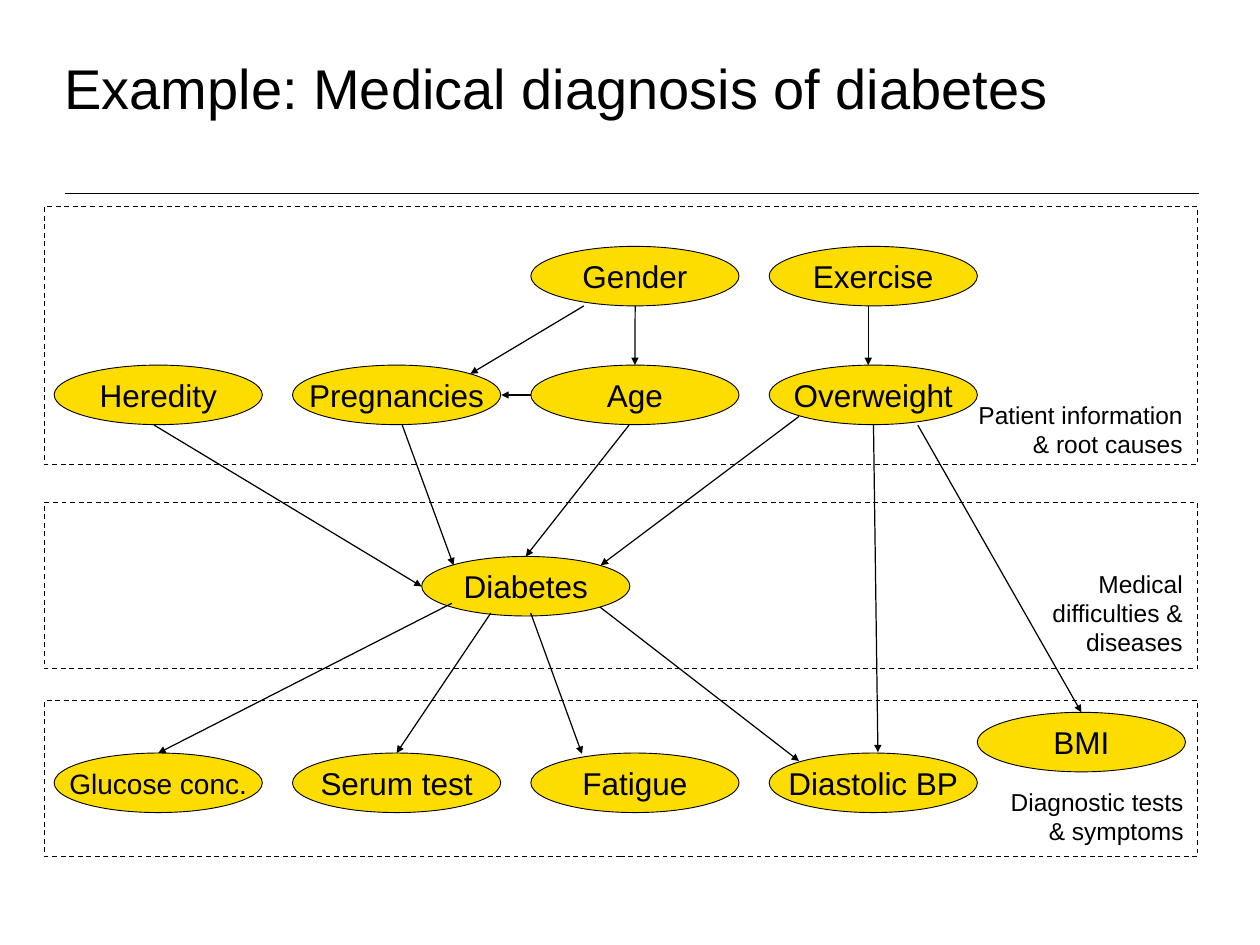
from lxml import etree
from pptx import Presentation
from pptx.dml.color import RGBColor
from pptx.enum.dml import MSO_LINE
from pptx.enum.shapes import MSO_CONNECTOR as CONN, MSO_SHAPE as SHAPE
from pptx.enum.text import MSO_ANCHOR as ANCHOR, MSO_AUTO_SIZE as FIT, PP_ALIGN as ALIGN
from pptx.oxml.ns import qn
from pptx.util import Pt


def rgb(value):
    return RGBColor.from_string(value)


class Diagram:
    font, ink, yellow = "Arial", "000000", "FDDD00"
    node_w, node_h = 169.2, 48.4

    def __init__(self, slide):
        self.s = slide
        self.nodes = {}

    def set_text(self, tf, text, size, align, anchor, wrap, margins=(10, 5)):
        tf.text = text
        tf.word_wrap = wrap
        tf.auto_size = FIT.NONE
        tf.vertical_anchor = anchor
        tf.margin_left = tf.margin_right = Pt(margins[0])
        tf.margin_top = tf.margin_bottom = Pt(margins[1])
        p = tf.paragraphs[0]
        p.alignment = align
        font = p.runs[0].font
        font.name, font.size = self.font, Pt(size)
        font.color.rgb = rgb(self.ink)

    def outline(self, shape, width):
        shape.line.color.rgb = rgb(self.ink)
        shape.line.width = Pt(width)

    def title(self, text, x, y, w, h):
        sp = self.s.shapes.title
        sp.left, sp.top, sp.width, sp.height = Pt(x), Pt(y), Pt(w), Pt(h)
        self.set_text(sp.text_frame, text, 45.5, ALIGN.LEFT, ANCHOR.BOTTOM, True)

    def label(self, text, x, y, w, h):
        sp = self.s.shapes.add_textbox(Pt(x), Pt(y), Pt(w), Pt(h))
        self.set_text(sp.text_frame, text, 19.9, ALIGN.RIGHT, ANCHOR.TOP, True)

    def band(self, y, h):
        sp = self.s.shapes.add_shape(SHAPE.RECTANGLE, Pt(36), Pt(y), Pt(937.4), Pt(h))
        sp.shadow.inherit = False
        sp.fill.background()
        self.outline(sp, 1)
        sp.line.dash_style = MSO_LINE.DASH

    def node(self, text, x, y, size=25.6):
        sp = self.s.shapes.add_shape(
            SHAPE.OVAL, Pt(x), Pt(y), Pt(self.node_w), Pt(self.node_h))
        sp.shadow.inherit = False
        sp.fill.solid()
        sp.fill.fore_color.rgb = rgb(self.yellow)
        self.outline(sp, 0.75)
        self.set_text(sp.text_frame, text, size, ALIGN.CENTER, ANCHOR.MIDDLE, False, (0, 0))
        self.nodes[text] = sp

    def line(self, x1, y1, x2, y2, width):
        c = self.s.shapes.add_connector(CONN.STRAIGHT, Pt(x1), Pt(y1), Pt(x2), Pt(y2))
        self.outline(c, width)
        etree.SubElement(c._element.spPr, qn("a:effectLst"))
        return c

    def arrow(self, start, end):
        """Point at a place, or at the top of the node with the given name."""
        to_node = isinstance(end, str)
        c = self.line(*start, *(start if to_node else end), 1)
        if to_node:
            c.end_connect(self.nodes[end], 0)
        ln = c._element.spPr.find(qn("a:ln"))
        etree.SubElement(ln, qn("a:tailEnd"), type="triangle")


def main():
    prs = Presentation()
    prs.slide_width, prs.slide_height = Pt(1024), Pt(768)
    d = Diagram(prs.slides.add_slide(prs.slide_layouts[5]))

    # Title and rule
    d.title("Example: Medical diagnosis of diabetes", 42.5, 17.3, 870.5, 85.7)
    d.line(52.6, 157, 974.2, 157, 0.75)

    # Dashed bands and their labels
    for y, h in ((167.8, 209.5), (408.2, 135.4), (569.5, 126.7)):
        d.band(y, h)
    d.label("Patient information & root causes", 781.9, 319.7, 189.4, 58.3)
    d.label("Medical difficulties & diseases", 810, 457.2, 161.3, 82.1)
    d.label("Diagnostic tests & symptoms", 810, 634.3, 162, 58.3)

    # Nodes: four columns, with Diabetes and BMI placed apart
    cols = [44 + 193.7 * i for i in range(4)]
    causes, tests = 296.7, 612
    for name, x in zip(("Gender", "Exercise"), cols[2:]):
        d.node(name, x, 200.2)
    for name, x in zip(("Heredity", "Pregnancies", "Age", "Overweight"), cols):
        d.node(name, x, causes)
    d.node("Diabetes", 342.7, 452.2)
    d.node("Glucose conc.", cols[0], tests, 22.8)
    for name, x in zip(("Serum test", "Fatigue", "Diastolic BP"), cols[1:]):
        d.node(name, x, tests)
    d.node("BMI", 794.2, 578.9)

    # Arrows among the causes
    d.arrow((516.2, 248.6), "Age")
    d.arrow((474.5, 248.6), (382.3, 303.8))
    d.arrow((705.6, 248.6), (705.6, causes))
    d.arrow((431.3, 321), (407.5, 321))

    # Arrows from the causes to the disease
    d.arrow((125.3, 345.5), (342.7, 476.6))
    d.arrow((326.9, 345.5), (368.6, 459.4))
    d.arrow((511.2, 345.5), "Diabetes")
    d.arrow((649.4, 338.4), (488.2, 459.4))

    # Arrows to the tests and symptoms
    d.arrow((367.2, 490.3), "Glucose conc.")
    d.arrow((398.9, 498.2), "Serum test")
    d.arrow((431.3, 498.2), (473, 612.7))
    d.arrow((487.4, 493.2), (649.4, 618.5))
    d.arrow((709.9, 345.5), (713.5, 611.3))
    d.arrow((745.9, 345.5), "BMI")

    prs.save("out.pptx")


if __name__ == "__main__":
    main()
